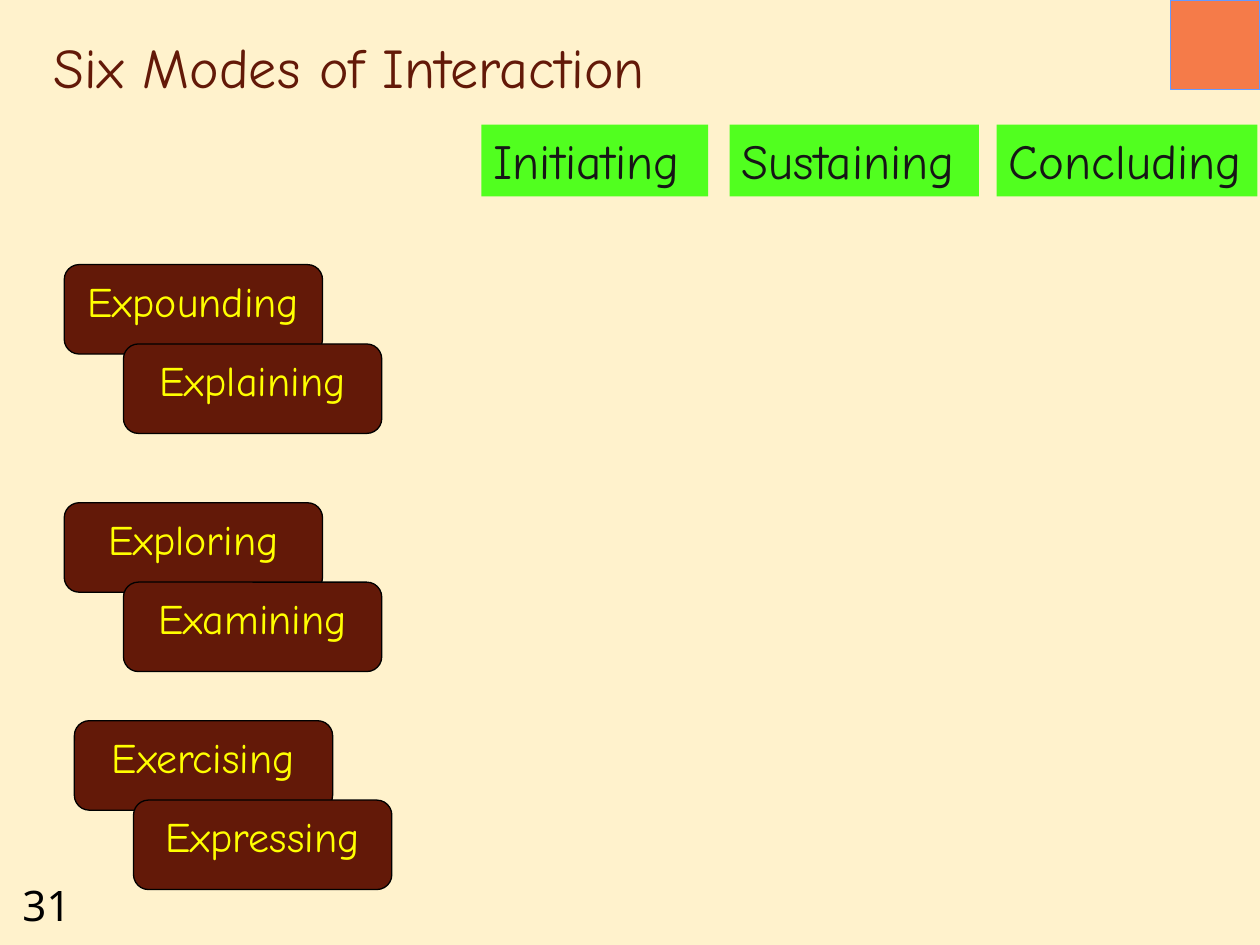
import pptx
import pptx.util
import pptx.dml.color
import pptx.enum.shapes
import pptx.enum.text

Inches = pptx.util.Inches
SHAPE = pptx.enum.shapes.MSO_SHAPE
ALIGN = pptx.enum.text.PP_ALIGN
ANCHOR = pptx.enum.text.MSO_ANCHOR


def rgb(value):
    return pptx.dml.color.RGBColor.from_string(value)


class Deck:
    font = "Comic Neue"
    brown = "631908"
    yellow = "FFFF00"
    green = "51FF1F"
    dark = "161616"

    def __init__(self, width, height):
        self.prs = pptx.Presentation()
        self.prs.slide_width = Inches(width)
        self.prs.slide_height = Inches(height)

    def add_slide(self, background):
        self.s = self.prs.slides.add_slide(self.prs.slide_layouts[6])
        fill = self.s.background.fill
        fill.solid()
        fill.fore_color.rgb = rgb(background)

    def label(self, sp, text, size, color, font=None, align=ALIGN.LEFT, anchor=ANCHOR.TOP):
        tf = sp.text_frame
        tf.text = text
        tf.word_wrap = True
        tf.vertical_anchor = anchor
        p = tf.paragraphs[0]
        p.alignment = align
        r = p.runs[0]
        r.font.size = pptx.util.Pt(size)
        r.font.name = font or self.font
        r.font.color.rgb = rgb(color)

    def text(self, box, text, size, color, **style):
        sp = self.s.shapes.add_textbox(*map(Inches, box))
        self.label(sp, text, size, color, **style)

    def shape(self, kind, box, fill, line=None):
        sp = self.s.shapes.add_shape(kind, *map(Inches, box))
        sp.shadow.inherit = False
        sp.fill.solid()
        sp.fill.fore_color.rgb = rgb(fill)
        if line:
            sp.line.color.rgb = rgb(line)
            sp.line.width = pptx.util.Pt(0.75)
        else:
            sp.line.fill.background()
        return sp

    def mode(self, left, top, text):
        sp = self.shape(SHAPE.ROUNDED_RECTANGLE, (left, top, 2.05, 0.71), self.brown, "000000")
        self.label(sp, text, 24, self.yellow, align=ALIGN.CENTER)

    def mode_pair(self, left, top, first, second):
        """Two overlapping boxes, the second stepped down and right."""
        self.mode(left, top, first)
        self.mode(left + 0.47, top + 0.63, second)

    def phase(self, left, width, text):
        sp = self.shape(SHAPE.RECTANGLE, (left, 0.99, width, 0.57), self.green)
        self.label(sp, text, 28, self.dark)


def main():
    deck = Deck(10, 7.5)
    deck.add_slide("FFF2CC")
    deck.text((0.08, 6.93, 0.75, 0.5), "31", 24, "000000", font="Noto Sans")
    deck.text((0.33, 0.17, 8.5, 0.67), "Six Modes of Interaction", 32, deck.brown,
              anchor=ANCHOR.BOTTOM)

    for pair in ((0.51, 2.1, "Expounding", "Explaining"),
                 (0.51, 3.99, "Exploring", "Examining"),
                 (0.59, 5.72, "Exercising", "Expressing")):
        deck.mode_pair(*pair)

    for phase in ((3.82, 1.8, "Initiating"),
                  (5.79, 1.98, "Sustaining"),
                  (7.91, 2.07, "Concluding")):
        deck.phase(*phase)

    deck.shape(SHAPE.ACTION_BUTTON_CUSTOM, (9.29, 0, 0.71, 0.71), "F57B49", "6699FF")
    deck.prs.save("out.pptx")


if __name__ == "__main__":
    main()
